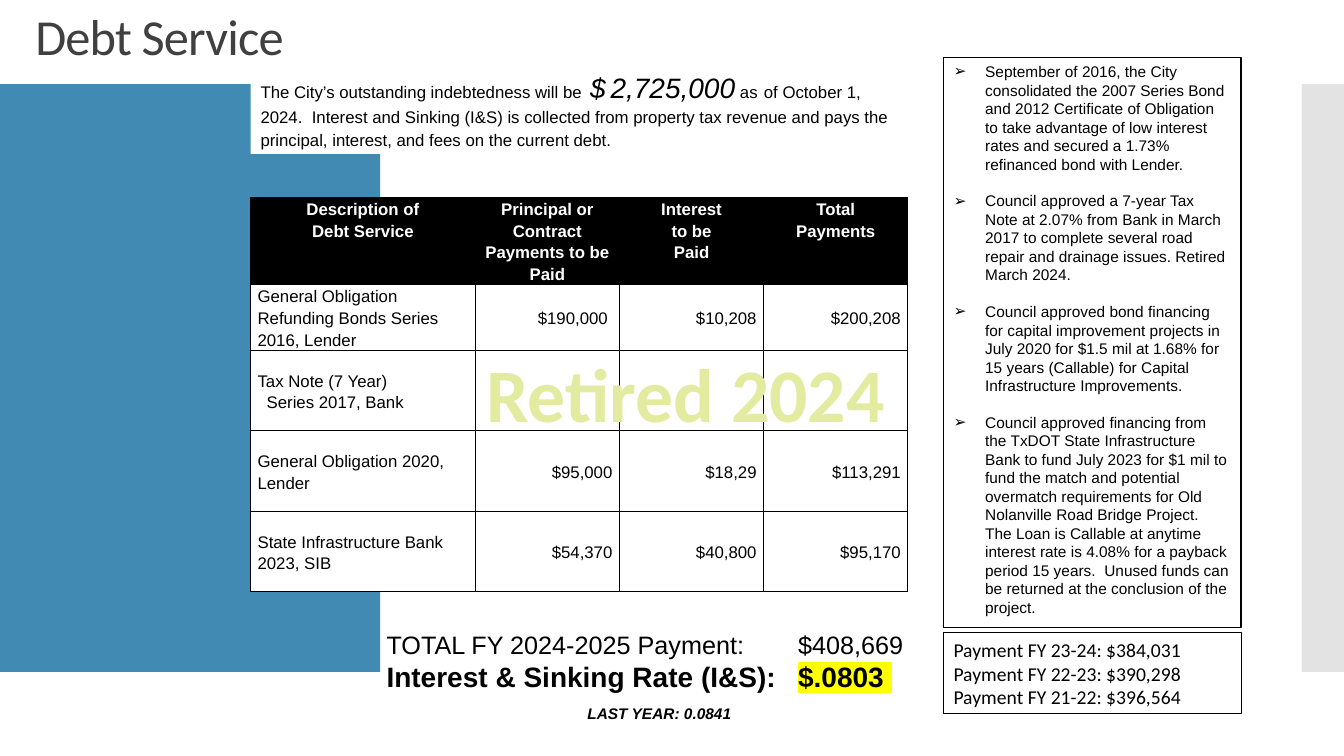
from lxml import etree
from pptx import Presentation
from pptx import util as u
from pptx.dml.color import RGBColor
from pptx.enum import shapes, text
from pptx.oxml.ns import qn

Pt = u.Pt
BLACK, WHITE, BLUE, GRAY = "000000", "FFFFFF", "418AB3", "C8C8C8"

HEADINGS = ["Description of\nDebt Service", "Principal or Contract Payments to be Paid",
            "Interest\nto be\nPaid", "Total\nPayments"]
DEBTS = [
    ["General Obligation Refunding Bonds Series 2016, Lender", "$190,000 ", "$10,208", "$200,208"],
    ["Tax Note (7 Year)\nSeries 2017, Bank", "", "", ""],
    ["General Obligation 2020, Lender", "$95,000", "$18,29", "$113,291"],
    ["State Infrastructure Bank 2023, SIB", "$54,370", "$40,800", "$95,170"],
]
HISTORY = [
    "September of 2016, the City consolidated the 2007 Series Bond and 2012 Certificate of "
    "Obligation to take advantage of low interest rates and secured a 1.73% refinanced bond "
    "with Lender.",
    "Council approved a 7-year Tax Note at 2.07% from Bank in March 2017 to complete several "
    "road repair and drainage issues. Retired March 2024.",
    "Council approved bond financing for capital improvement projects in July 2020 for $1.5 mil "
    "at 1.68% for 15 years (Callable) for Capital Infrastructure Improvements.",
    "Council approved financing from the TxDOT State Infrastructure Bank to fund July 2023 for "
    "$1 mil to fund the match and potential overmatch requirements for Old Nolanville Road "
    "Bridge Project.  The Loan is Callable at anytime interest rate is 4.08% for a payback "
    "period 15 years.  Unused funds can be returned at the conclusion of the project.",
]
PAYMENTS = ["Payment FY 23-24: $384,031", "Payment FY 22-23: $390,298",
            "Payment FY 21-22: $396,564"]


def color(value):
    return RGBColor.from_string(value)


def child(parent, tag, **attributes):
    return etree.SubElement(parent, qn(tag), attributes)


def set_font(font, size, name="Arial", fill=BLACK, bold=False, italic=False):
    font.size, font.name, font.bold, font.italic = Pt(size), name, bold, italic
    font.color.rgb = color(fill)


def place(shape, box):
    shape.left, shape.top, shape.width, shape.height = (Pt(length) for length in box)


def outline(shape, width):
    shape.line.color.rgb = color(BLACK)
    shape.line.width = Pt(width)


def add_panel(page, box, fill=WHITE):
    panel = page.shapes.add_shape(shapes.MSO_SHAPE.RECTANGLE, *(Pt(length) for length in box))
    panel.shadow.inherit = False
    panel.fill.solid()
    panel.fill.fore_color.rgb = color(fill)
    panel.line.fill.background()
    panel.text_frame.word_wrap = True
    return panel


def add_text_box(page, box, wrap=True):
    label = page.shapes.add_textbox(*(Pt(length) for length in box))
    label.text_frame.word_wrap = wrap
    return label.text_frame


# Side bands
def add_background(page, box):
    left, top, width, height = box
    add_panel(page, (left, top, 271.5, height), BLUE)
    band = add_panel(page, (left + width - 30, top, 30, height), GRAY)
    child(band.fill.fore_color._xFill.find(qn("a:srgbClr")), "a:alpha", val="50000")


# Title
def fill_title(title, box):
    place(title, box)
    title.text_frame.text = "Debt Service"
    title.text_frame.vertical_anchor = text.MSO_ANCHOR.MIDDLE
    para = title.text_frame.paragraphs[0]
    para.alignment, para.line_spacing = text.PP_ALIGN.LEFT, 0.9
    set_font(para.font, 36, "Calibri", "404040")
    para.runs[0]._r.get_or_add_rPr().set("spc", "-60")


# Opening statement
def add_intro(page, box):
    frame = add_panel(page, box).text_frame
    frame.vertical_anchor = text.MSO_ANCHOR.TOP
    para = frame.paragraphs[0]
    para.alignment, para.line_spacing, para.space_after = text.PP_ALIGN.LEFT, 1.15, Pt(8)
    for words, size, italic in [
        ("The City’s outstanding indebtedness will be", 12, False), (" $", 20, True),
        (" ", 12, False), ("2,725,000", 20, True), (" as", 12, False), (" ", 16, False),
        ("of October 1, 2024.  Interest and Sinking (I&S) is collected from property tax "
         "revenue and pays the principal, interest, and fees on the current debt.", 12, False),
    ]:
        span = para.add_run()
        span.text = words
        set_font(span.font, size, italic=italic)


# Debt table
def add_borders(cell):
    properties = cell._tc.get_or_add_tcPr()
    for index, side in enumerate(["a:lnL", "a:lnR", "a:lnT", "a:lnB"]):
        line = etree.Element(qn(side), w=str(Pt(1)))
        child(child(line, "a:solidFill"), "a:srgbClr", val=BLACK)
        properties.insert(index, line)


def fill_cell(cell, words, header, first):
    cell.fill.solid()
    cell.fill.fore_color.rgb = color(BLACK if header else WHITE)
    cell.margin_left = cell.margin_right = Pt(5)
    cell.margin_top = cell.margin_bottom = 0
    cell.vertical_anchor = text.MSO_ANCHOR.TOP if header else text.MSO_ANCHOR.MIDDLE
    cell.text_frame.text = words
    align = text.PP_ALIGN.LEFT if first else text.PP_ALIGN.RIGHT
    for para in cell.text_frame.paragraphs:
        para.alignment = text.PP_ALIGN.CENTER if header else align
        para.line_spacing = 1.15
        set_font(para.font, 12, fill=WHITE if header else BLACK, bold=header)
    if not header:
        para.space_after = Pt(8)
        if "\n" in words:
            para._p.get_or_add_pPr().set("marL", str(Pt(6.5)))
    add_borders(cell)


def add_debt_table(page, box):
    rows = [HEADINGS] + DEBTS
    table = page.shapes.add_table(len(rows), 4, *(Pt(length) for length in box)).table
    for column, width in zip(table.columns, [160.5, 103, 103, 103]):
        column.width = Pt(width)
    for row, height in zip(table.rows, [59, 47.5, 57.5, 57.5, 57.5]):
        row.height = Pt(height)
    for r, values in enumerate(rows):
        for c, words in enumerate(values):
            fill_cell(table.cell(r, c), words, r == 0, c == 0)


# Label over the retired note
def add_retired_label(page, box):
    para = add_text_box(page, box, wrap=False).paragraphs[0]
    para.alignment = text.PP_ALIGN.CENTER
    span = para.add_run()
    span.text = "Retired 2024"
    set_font(span.font, 54, "Calibri", "E2EBA0", bold=True)
    line = etree.Element(qn("a:ln"), w=str(Pt(1.75)))
    child(child(line, "a:solidFill"), "a:srgbClr", val="A6B727")
    span._r.get_or_add_rPr().insert(0, line)


# Totals under the table
def add_totals(page, box):
    frame = add_text_box(page, box)
    frame.text = "TOTAL FY 2024-2025 Payment:\t$408,669\nInterest & Sinking Rate (I&S):\t\nLAST YEAR: 0.0841"
    total, rate, last_year = frame.paragraphs
    set_font(total.font, 18)
    set_font(rate.font, 20, bold=True)
    set_font(last_year.font, 11, bold=True, italic=True)
    for para in (total, rate):
        stops = etree.Element(qn("a:tabLst"))
        child(stops, "a:tab", pos=str(Pt(294)), algn="l")
        para._p.get_or_add_pPr().insert(0, stops)
    span = rate.add_run()
    span.text = "$.0803 "
    set_font(span.font, 20, bold=True)
    highlight = etree.Element(qn("a:highlight"))
    child(highlight, "a:srgbClr", val="FFFF00")
    span._r.get_or_add_rPr().find(qn("a:solidFill")).addnext(highlight)
    last_year.space_before = Pt(8)
    last_year._p.get_or_add_pPr().set("marL", str(Pt(143.5)))


# Financing history list
def fill_history(body, box):
    place(body, box)
    body.fill.solid()
    body.fill.fore_color.rgb = color(WHITE)
    outline(body, 0.85)
    frame = body.text_frame
    frame.auto_size = text.MSO_AUTO_SIZE.NONE
    frame.vertical_anchor = text.MSO_ANCHOR.TOP
    frame.text = "\n".join(HISTORY)
    for para in frame.paragraphs:
        para.space_before, para.space_after = 0, Pt(13)
        set_font(para.font, 11)
        properties = para._p.get_or_add_pPr()
        properties.set("marL", str(Pt(22.5)))
        properties.set("indent", str(Pt(-22.5)))
        bullet = etree.Element(qn("a:buChar"), char="➢")
        properties.find(qn("a:defRPr")).addprevious(bullet)


# Earlier payments
def add_payments(page, box):
    panel = add_panel(page, box)
    outline(panel, 0.75)
    panel.text_frame.text = "\n".join(PAYMENTS)
    for para in panel.text_frame.paragraphs:
        para.alignment = text.PP_ALIGN.LEFT
        set_font(para.font, 14, "Calibri")


def build_debt_slide(deck):
    page = deck.slides.add_slide(deck.slide_layouts[1])
    add_background(page, (0, 60, 960, 420))
    fill_title(page.shapes.title, (18, -29, 792, 114.5))
    add_intro(page, (179, 43, 469.5, 67))
    add_debt_table(page, (179, 141, 469.5, 279))
    add_totals(page, (269, 446, 500, 78))
    fill_history(page.placeholders[1], (674, 41, 212.5, 407))
    add_payments(page, (674, 452, 212.5, 58))
    add_retired_label(page, (336, 244, 307.5, 73))


def main():
    deck = Presentation()
    deck.slide_width, deck.slide_height = Pt(960), Pt(540)
    build_debt_slide(deck)
    deck.save("out.pptx")


if __name__ == "__main__":
    main()
